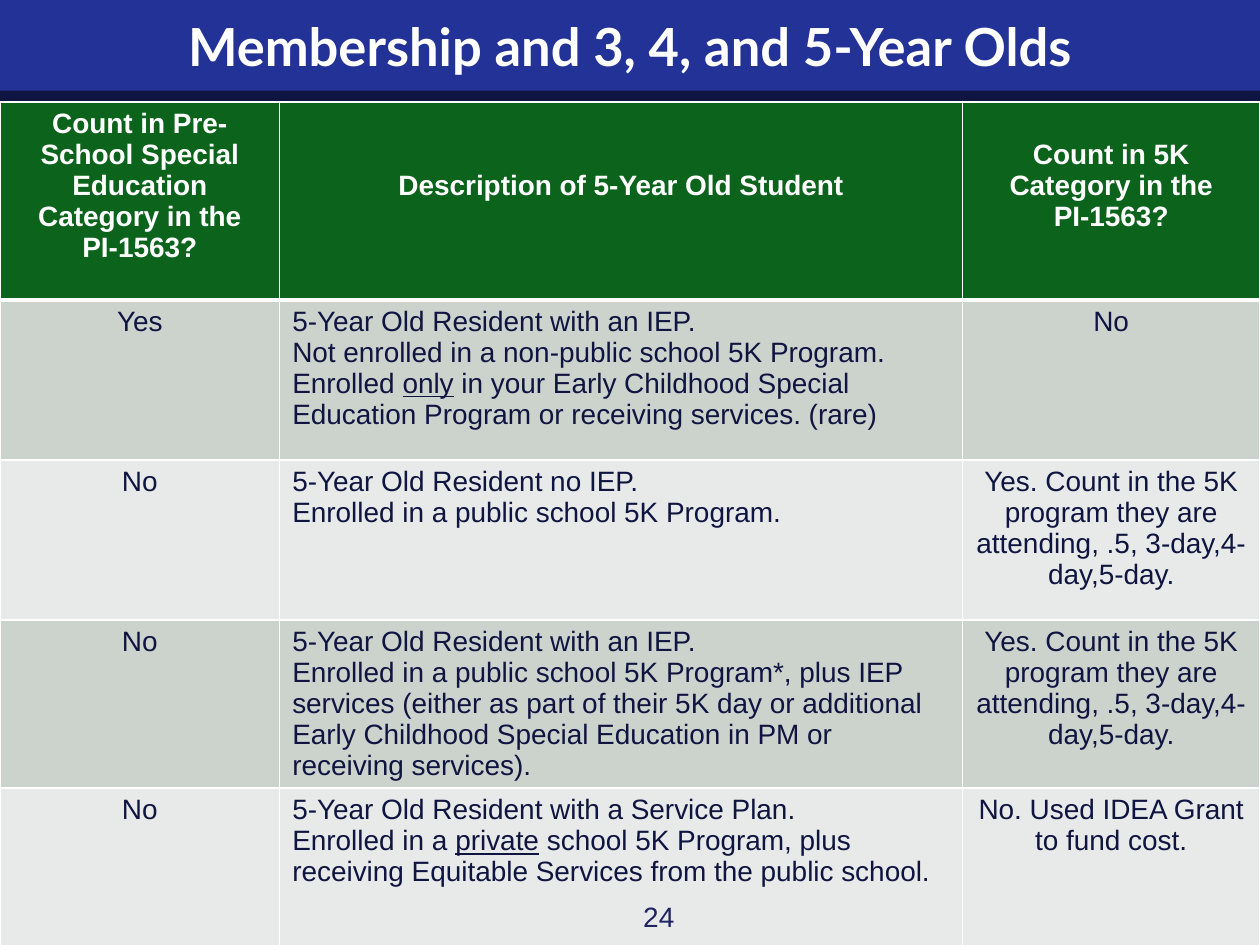
import pptx
import pptx.util
import pptx.dml.color
import pptx.enum.text
import pptx.oxml.ns
from lxml import etree

Inches, Pt = pptx.util.Inches, pptx.util.Pt
RGB = pptx.dml.color.RGBColor.from_string
ALIGN = pptx.enum.text.PP_ALIGN
MIDDLE = pptx.enum.text.MSO_ANCHOR.MIDDLE

COLORS = {"navy": "0F1540", "blue": "233297", "green": "0C631B", "white": "FFFFFF",
          "dark_band": "CCD3CD", "light_band": "E7EAE8", "number": "1F2264"}
TITLE = "Membership and 3, 4, and 5-Year Olds"
PAGE = "24"
HEADERS = ["Count in Pre-School Special Education Category in the PI-1563?",
           "Description of 5-Year Old Student",
           "Count in 5K Category in the PI-1563?"]
HEADER_LINES_DOWN = [0, 2, 1]
COUNTED = "Yes. Count in the 5K program they are attending, .5, 3-day,4-day,5-day."
# Words between underscores are underlined.
ROWS = [
    ("Yes",
     ["5-Year Old Resident with an IEP.",
      "Not enrolled in a non-public school 5K Program.",
      "Enrolled _only_ in your Early Childhood Special Education Program "
      "or receiving services. (rare)"],
     "No"),
    ("No",
     ["5-Year Old Resident no IEP.",
      "Enrolled in a public school 5K Program."],
     COUNTED),
    ("No",
     ["5-Year Old Resident with an IEP.",
      "Enrolled in a public school 5K Program*, plus IEP services (either as part of "
      "their 5K day or additional Early Childhood Special Education in PM or "
      "receiving services)."],
     COUNTED),
    ("No",
     ["5-Year Old Resident with a Service Plan.",
      "Enrolled in a _private_ school 5K Program, plus receiving Equitable Services "
      "from the public school."],
     "No. Used IDEA Grant to fund cost."),
]
COL_WIDTHS = [2.22, 5.42, 2.36]
HEADER_H, ROW_H = 1.57, 1.27
TABLE_TOP = 0.81
LINE_H = 0.246
MARGIN = 0.05


def style(r, size, color, font="Arial", bold=False):
    r.font.size, r.font.name, r.font.bold = Pt(size), font, bold
    r.font.color.rgb = RGB(COLORS[color])


def write(tf, lines, align, size, color, **font):
    for i, line in enumerate(lines):
        p = tf.add_paragraph() if i else tf.paragraphs[0]
        p.alignment = align
        for j, part in enumerate(line.split("_")):
            r = p.add_run()
            r.text = part
            style(r, size, color, **font)
            if j % 2:
                r.font.underline = True


def set_borders(cell, **widths):
    """Draw white cell borders; widths are points by side L, R, T, B."""
    tcPr = cell._tc.get_or_add_tcPr()
    for i, (side, width) in enumerate(widths.items()):
        ln = etree.Element(pptx.oxml.ns.qn(f"a:ln{side}"), w=str(Pt(width)))
        fill = etree.SubElement(ln, pptx.oxml.ns.qn("a:solidFill"))
        etree.SubElement(fill, pptx.oxml.ns.qn("a:srgbClr"), val=COLORS["white"])
        tcPr.insert(i, ln)


def fill_cell(cell, lines, align, band, color, bold=False, top=1, bottom=1):
    cell.fill.solid()
    cell.fill.fore_color.rgb = RGB(COLORS[band])
    set_borders(cell, L=1, R=1, T=top, B=bottom)
    write(cell.text_frame, lines, align, 16, color, bold=bold)


def add_title(s):
    sp = s.shapes.title
    sp.left, sp.top, sp.width, sp.height = 0, 0, Inches(10), Inches(0.72)
    sp.fill.solid()
    sp.fill.fore_color.rgb = RGB(COLORS["blue"])
    tf = sp.text_frame
    tf.auto_size = pptx.enum.text.MSO_AUTO_SIZE.NONE
    tf.vertical_anchor = MIDDLE
    write(tf, [TITLE], ALIGN.CENTER, 30, "white", font="Lato", bold=True)


def add_membership_table(s):
    height = HEADER_H + ROW_H * len(ROWS)
    table = s.shapes.add_table(len(ROWS) + 1, len(HEADERS), 0, Inches(TABLE_TOP),
                               Inches(sum(COL_WIDTHS)), Inches(height)).table
    for col, width in zip(table.columns, COL_WIDTHS):
        col.width = Inches(width)
    for i, row in enumerate(table.rows):
        row.height = Inches(ROW_H if i else HEADER_H)
    for c, (text, down) in enumerate(zip(HEADERS, HEADER_LINES_DOWN)):
        cell = table.cell(0, c)
        fill_cell(cell, [text], ALIGN.CENTER, "green", "white", bold=True, bottom=3)
        cell.margin_top = Inches(MARGIN + down * LINE_H)
    for i, (preschool, description, five_k) in enumerate(ROWS, 1):
        band = "dark_band" if i % 2 else "light_band"
        top = 3 if i == 1 else 1
        for c, lines in enumerate([[preschool], description, [five_k]]):
            align = ALIGN.LEFT if c == 1 else ALIGN.CENTER
            fill_cell(table.cell(i, c), lines, align, band, "navy", top=top)


def add_page_number(s):
    tf = s.shapes.add_textbox(Inches(3.12), Inches(7.07),
                              Inches(2.33), Inches(0.4)).text_frame
    tf.word_wrap = True
    tf.vertical_anchor = MIDDLE
    write(tf, [PAGE], ALIGN.RIGHT, 16, "number")


def main():
    prs = pptx.Presentation()
    prs.slide_width, prs.slide_height = Inches(10), Inches(7.5)
    s = prs.slides.add_slide(prs.slide_layouts[5])
    s.background.fill.solid()
    s.background.fill.fore_color.rgb = RGB(COLORS["navy"])
    add_title(s)
    add_membership_table(s)
    add_page_number(s)
    prs.save("out.pptx")


if __name__ == "__main__":
    main()
